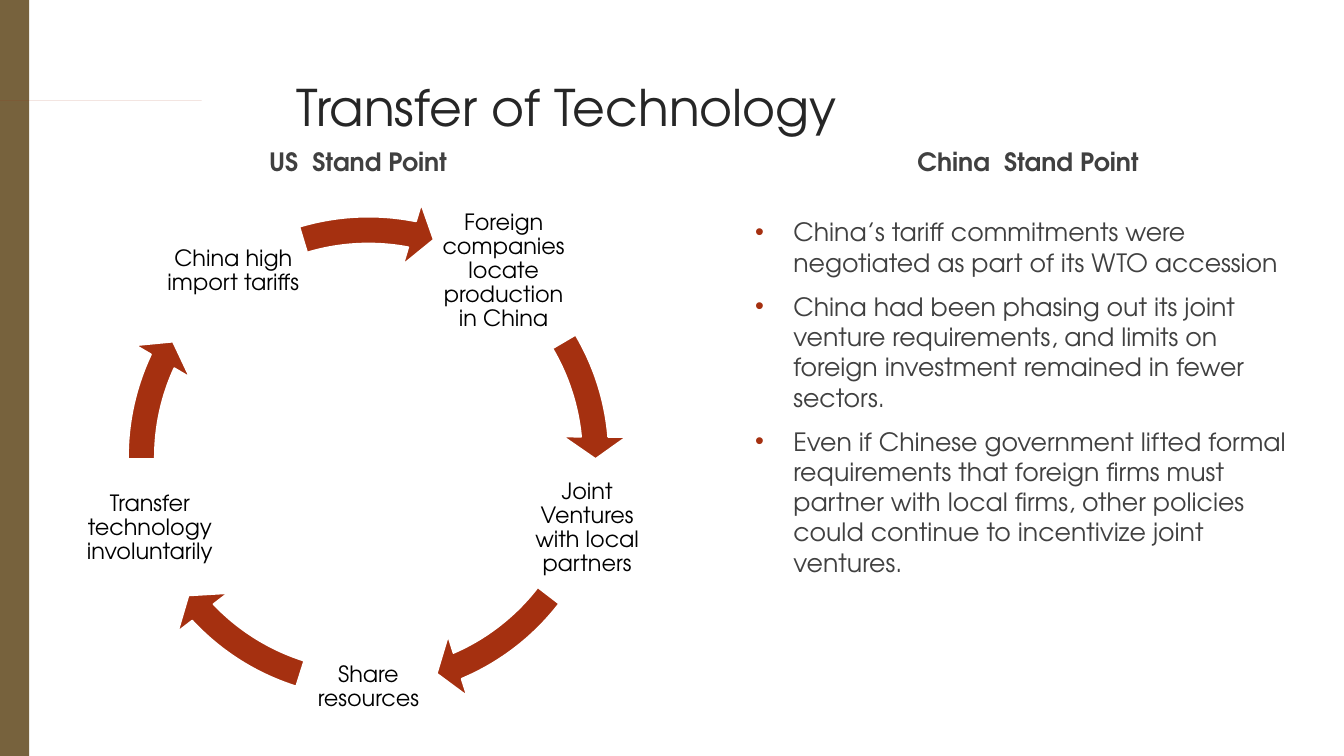
"""Build the Transfer of Technology slide: a five-step cycle beside a bullet list."""
import math

import lxml.etree
import pptx
import pptx.dml.color
import pptx.enum.shapes
import pptx.enum.text
import pptx.oxml.ns
import pptx.util

SLIDE = (13.33, 7.5)
FONT = "TeX Gyre Adventor"
RUST, BROWN, WHITE = "A53010", "77623D", "FFFFFF"
INK, GREY, BLACK = "262626", "404040", "000000"

TITLE = "Transfer of Technology"
STEPS = [
    ("Foreign companies locate production in China", 329.44, 354.88),
    ("Joint Ventures with local partners", 37.57, 66.9),
    ("Share resources", 107.5, 136.84),
    ("Transfer technology involuntarily", 179.52, 204.96),
    ("China high import tariffs", 253.31, 281.09),
]
HEADINGS = [("US  Stand Point", 2.57), ("China  Stand Point", 9)]
CHINA_POINTS = [
    "China’s tariff commitments were negotiated as part of its WTO accession",
    "China had been phasing out its joint venture requirements, and limits on "
    "foreign investment remained in fewer sectors.",
    "Even if Chinese government lifted formal requirements that foreign firms must "
    "partner with local firms, other policies could continue to incentivize joint ventures.",
]

RING_CENTRE, RING_SIZE = (3.655, 4.535), 5.13
LABEL_RADIUS, LABEL_SIZE, FIRST_ANGLE = 2.28, 1.37, -54
BAND, HEAD_ANGLE, HEAD_WIDTH = 0.052, 3.36, 0.061
ADJUSTMENT_PER_DEGREE = 0.6
TAG = [(0, 0.78), (1.47, 0.78), (1.74, 1.06), (1.47, 1.34), (0, 1.34)]

TOP, MIDDLE = pptx.enum.text.MSO_ANCHOR.TOP, pptx.enum.text.MSO_ANCHOR.MIDDLE
LEFT, CENTER = pptx.enum.text.PP_ALIGN.LEFT, pptx.enum.text.PP_ALIGN.CENTER
SPACED = {"alignment": LEFT, "space_before": pptx.util.Pt(10)}
LABEL_FRAME = {"vertical_anchor": MIDDLE} | {
    f"margin_{side}": pptx.util.Inches(0.02) for side in ("left", "top", "right", "bottom")}


def assign(target, values):
    """Set each named attribute on the target."""
    for name, value in values.items():
        setattr(target, name, value)


def inches(*lengths):
    """Convert lengths in inches to slide units."""
    return [pptx.util.Inches(length) for length in lengths]


def rgb(code):
    """Turn a hex string into a colour."""
    return pptx.dml.color.RGBColor.from_string(code)


def paint(shape, fill, line=None):
    """Give a shape a flat fill and an optional outline."""
    shape.shadow.inherit = False
    shape.fill.solid()
    shape.fill.fore_color.rgb = rgb(fill)
    if line:
        shape.line.color.rgb = rgb(line)
        shape.line.width = pptx.util.Pt(1.25)
    else:
        shape.line.fill.background()


def write(shape, texts, size, color, paragraph_format, frame_format=None, bold=False):
    """Write one formatted paragraph per text and return the paragraphs."""
    frame = shape.text_frame
    assign(frame, {"word_wrap": True, "vertical_anchor": TOP,
                   "auto_size": pptx.enum.text.MSO_AUTO_SIZE.NONE} | (frame_format or {}))
    frame.text = "\n".join(texts)
    for paragraph in frame.paragraphs:
        assign(paragraph, paragraph_format)
        font = paragraph.runs[0].font
        assign(font, {"name": FONT, "size": pptx.util.Pt(size), "bold": bold})
        font.color.rgb = rgb(color)
    return frame.paragraphs


def add_bullet(paragraph):
    """Hang a coloured bullet in front of a paragraph."""
    properties = paragraph._p.get_or_add_pPr()
    indent = pptx.util.Inches(0.38)
    properties.set("marL", str(indent))
    properties.set("indent", str(-indent))
    qn = pptx.oxml.ns.qn
    bullet_color = lxml.etree.SubElement(properties, qn("a:buClr"))
    lxml.etree.SubElement(bullet_color, qn("a:srgbClr"), val=RUST)
    lxml.etree.SubElement(properties, qn("a:buFont"), typeface="Arial")
    lxml.etree.SubElement(properties, qn("a:buChar"), char="•")


def add_side_marks(shapes):
    """Draw the left bar and the pointed tag over it."""
    bar = shapes.add_shape(pptx.enum.shapes.MSO_SHAPE.RECTANGLE, *inches(0, 0, 0.29, SLIDE[1]))
    paint(bar, BROWN)
    outline = shapes.build_freeform(*TAG[0], scale=pptx.util.Inches(1))
    outline.add_line_segments(TAG[1:], close=True)
    paint(outline.convert_to_shape(), RUST)


def add_cycle(shapes):
    """Place the step labels evenly on a ring, each followed by its arrow."""
    ring_corner = [middle - RING_SIZE / 2 for middle in RING_CENTRE]
    for index, (step, start, end) in enumerate(STEPS):
        angle = math.radians(FIRST_ANGLE + index * 360 / len(STEPS))
        corner = [middle + LABEL_RADIUS * turn - LABEL_SIZE / 2
                  for middle, turn in zip(RING_CENTRE, (math.cos(angle), math.sin(angle)))]
        label = shapes.add_textbox(*inches(*corner, LABEL_SIZE, LABEL_SIZE))
        write(label, [step], 16, BLACK, {"alignment": CENTER, "line_spacing": 0.9}, LABEL_FRAME)
        arrow = shapes.add_shape(pptx.enum.shapes.MSO_SHAPE.CIRCULAR_ARROW,
                                 *inches(*ring_corner, RING_SIZE, RING_SIZE))
        values = (BAND, HEAD_ANGLE, end * ADJUSTMENT_PER_DEGREE,
                  start * ADJUSTMENT_PER_DEGREE, HEAD_WIDTH)
        for position, value in enumerate(values):
            arrow.adjustments[position] = value
        paint(arrow, RUST, WHITE)


def main():
    """Assemble and save the slide."""
    deck = pptx.Presentation()
    deck.slide_width, deck.slide_height = inches(*SLIDE)
    slide = deck.slides.add_slide(deck.slide_layouts[5])
    shapes = slide.shapes
    add_side_marks(shapes)
    assign(shapes.title, dict(zip(("left", "top", "width", "height"),
                                  inches(2.84, 0.7, 10.14, 1.4))))
    write(shapes.title, [TITLE], 36, INK, {"alignment": LEFT})
    add_cycle(shapes)
    for heading, left in HEADINGS:
        box = shapes.add_textbox(*inches(left, 1.4, 2.55, 0.43))
        write(box, [heading], 18, GREY, SPACED, bold=True)
    points = shapes.add_textbox(*inches(7.39, 2.1, 5.49, 4.56))
    for paragraph in write(points, CHINA_POINTS, 18, GREY, SPACED):
        add_bullet(paragraph)
    deck.save("out.pptx")


if __name__ == "__main__":
    main()
